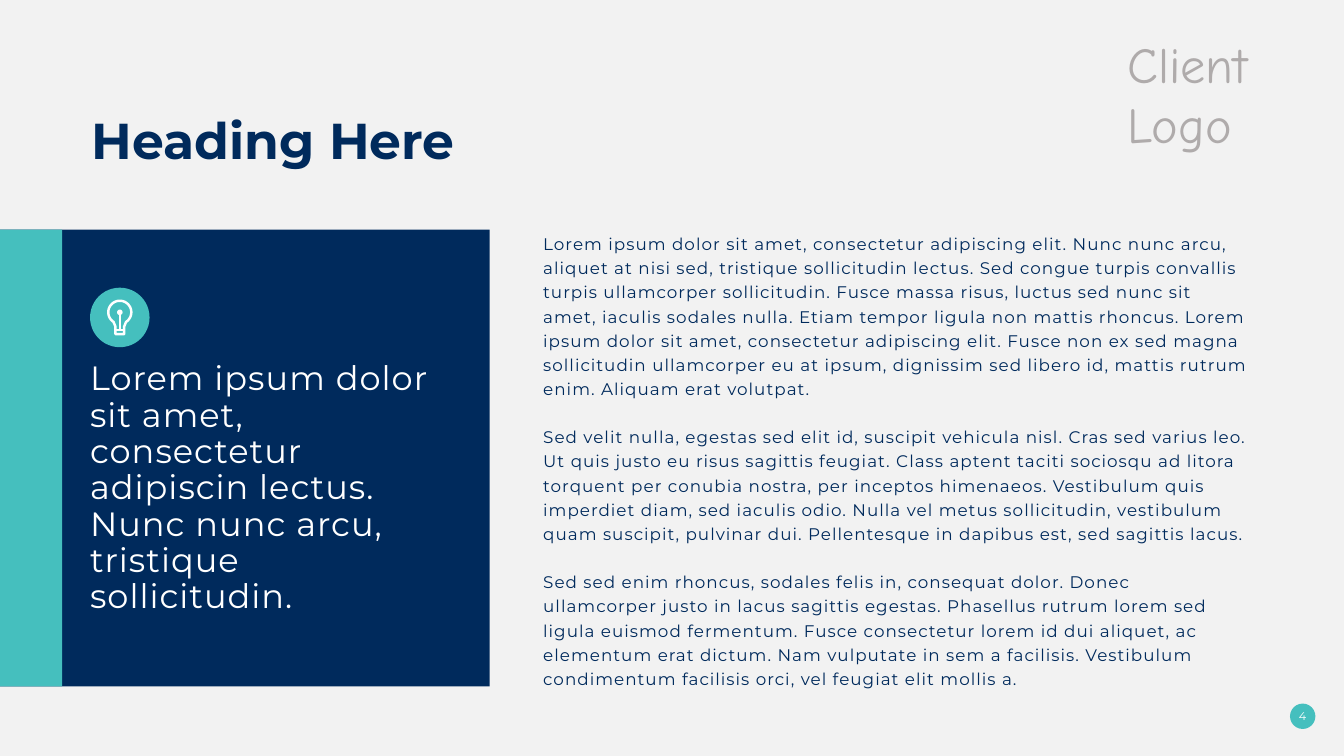
"""Build a heading slide with a highlighted callout panel and three body paragraphs."""
from math import cos, radians, sin

from lxml.etree import SubElement
from pptx import Presentation
from pptx.dml.color import RGBColor
from pptx.enum.shapes import MSO_CONNECTOR as CONN, MSO_SHAPE as SHAPE
from pptx.enum.text import MSO_ANCHOR as ANCHOR, PP_ALIGN as ALIGN
from pptx.oxml.ns import qn
from pptx.util import Cm, Pt

COLORS = {"bg": "F2F2F2", "navy": "002A5C", "teal": "45BFBE", "white": "FFFFFF", "gray": "AFABAB"}
RGB = {name: RGBColor.from_string(value) for name, value in COLORS.items()}

BODY = [
    "Lorem ipsum dolor sit amet, consectetur adipiscing elit. Nunc nunc arcu, aliquet at nisi sed, "
    "tristique sollicitudin lectus. Sed congue turpis convallis turpis ullamcorper sollicitudin. "
    "Fusce massa risus, luctus sed nunc sit amet, iaculis sodales nulla. Etiam tempor ligula non "
    "mattis rhoncus. Lorem ipsum dolor sit amet, consectetur adipiscing elit. Fusce non ex sed magna "
    "sollicitudin ullamcorper eu at ipsum, dignissim sed libero id, mattis rutrum enim. "
    "Aliquam erat volutpat.",
    "Sed velit nulla, egestas sed elit id, suscipit vehicula nisl. Cras sed varius leo. Ut quis justo "
    "eu risus sagittis feugiat. Class aptent taciti sociosqu ad litora torquent per conubia nostra, "
    "per inceptos himenaeos. Vestibulum quis imperdiet diam, sed iaculis odio. Nulla vel metus "
    "sollicitudin, vestibulum quam suscipit, pulvinar dui. Pellentesque in dapibus est, sed sagittis "
    "lacus.",
    "Sed sed enim rhoncus, sodales felis in, consequat dolor. Donec ullamcorper justo in lacus "
    "sagittis egestas. Phasellus rutrum lorem sed ligula euismod fermentum. Fusce consectetur lorem "
    "id dui aliquet, ac elementum erat dictum. Nam vulputate in sem a facilisis. Vestibulum "
    "condimentum facilisis orci, vel feugiat elit mollis a.",
]
CALLOUT = [
    "Lorem ipsum dolor sit amet, consectetur adipiscin lectus.",
    "Nunc nunc arcu, tristique sollicitudin.",
]

prs = Presentation()
prs.slide_width, prs.slide_height = Cm(33.87), Cm(19.05)
s = prs.slides.add_slide(prs.slide_layouts[6])
s.background.fill.solid()
s.background.fill.fore_color.rgb = RGB["bg"]


def add_block(kind, x, y, w, h, color):
    sp = s.shapes.add_shape(kind, Cm(x), Cm(y), Cm(w), Cm(h))
    sp.shadow.inherit = False
    sp.fill.solid()
    sp.fill.fore_color.rgb = RGB[color]
    sp.line.fill.background()
    return sp


def write(sp, texts, size, color, font="Montserrat", bold=False, leading=1.0, gap=0, spc=0,
          inset=0, align=ALIGN.LEFT):
    tf = sp.text_frame
    tf.word_wrap = True
    tf.margin_left = tf.margin_right = Cm(2 * inset)
    tf.margin_top = tf.margin_bottom = Cm(inset)
    for i, text in enumerate(texts):
        p = tf.add_paragraph() if i else tf.paragraphs[0]
        p.alignment, p.line_spacing = align, leading
        p.space_before = Pt(gap if i else 0)
        r = p.add_run()
        r.text = text
        if spc:
            r._r.get_or_add_rPr().set("spc", str(spc))
        p.font.name, p.font.size, p.font.bold = font, Pt(size), bold
        p.font.color.rgb = RGB[color]


page = add_block(SHAPE.OVAL, 32.51, 17.73, 0.64, 0.64, "teal")
page.text_frame.vertical_anchor = ANCHOR.MIDDLE
write(page, ["4"], 8, "white", align=ALIGN.CENTER)

logo = s.shapes.add_textbox(Cm(28.15), Cm(0.7), Cm(4.93), Cm(3.3))
write(logo, ["Client Logo"], 36, "gray", font="Comic Neue", inset=0.13)

title = s.shapes.add_textbox(Cm(2.31), Cm(3.05), Cm(25.43), Cm(1.68))
write(title, ["Heading Here"], 36, "navy", bold=True, leading=0.8)

body = s.shapes.add_textbox(Cm(13.69), Cm(5.79), Cm(17.81), Cm(11.66))
write(body, BODY, 12, "navy", leading=1.2, gap=17.2, spc=75)

add_block(SHAPE.RECTANGLE, 0, 5.79, 12.34, 11.51, "navy")
add_block(SHAPE.RECTANGLE, 0, 5.79, 1.57, 11.51, "teal")

callout = s.shapes.add_textbox(Cm(2.27), Cm(9.12), Cm(8.59), Cm(6.45))
write(callout, CALLOUT, 24, "white", leading=0.9, spc=75)

add_block(SHAPE.OVAL, 2.27, 7.25, 1.5, 1.5, "teal")
bulb_x, bulb_y, bulb_r = 3.02, 7.87, 0.29
half, neck_y, collar_y, base_y = 0.11, 8.23, 8.31, 8.42
points = [(bulb_x + bulb_r * cos(radians(a)), bulb_y + bulb_r * sin(radians(a)))
          for a in range(123, 418, 6)]
points += [(bulb_x + half, neck_y), (bulb_x + half, base_y),
           (bulb_x - half, base_y), (bulb_x - half, neck_y)]
points = [(Cm(x), Cm(y)) for x, y in points]
builder = s.shapes.build_freeform(*points[0])
builder.add_line_segments(points[1:], close=True)
bulb = builder.convert_to_shape()
bulb.shadow.inherit = False
bulb.fill.background()
bulb.line.color.rgb, bulb.line.width = RGB["white"], Pt(1.75)

for x1, y1, x2, y2 in [(bulb_x, bulb_y, bulb_x, collar_y),
                       (bulb_x - half, collar_y, bulb_x + half, collar_y)]:
    wire = s.shapes.add_connector(CONN.STRAIGHT, Cm(x1), Cm(y1), Cm(x2), Cm(y2))
    wire.line.color.rgb, wire.line.width = RGB["white"], Pt(1.75)
    SubElement(wire._element.spPr, qn("a:effectLst"))
add_block(SHAPE.OVAL, bulb_x - 0.07, bulb_y - 0.07, 0.14, 0.14, "white")

prs.save("out.pptx")
